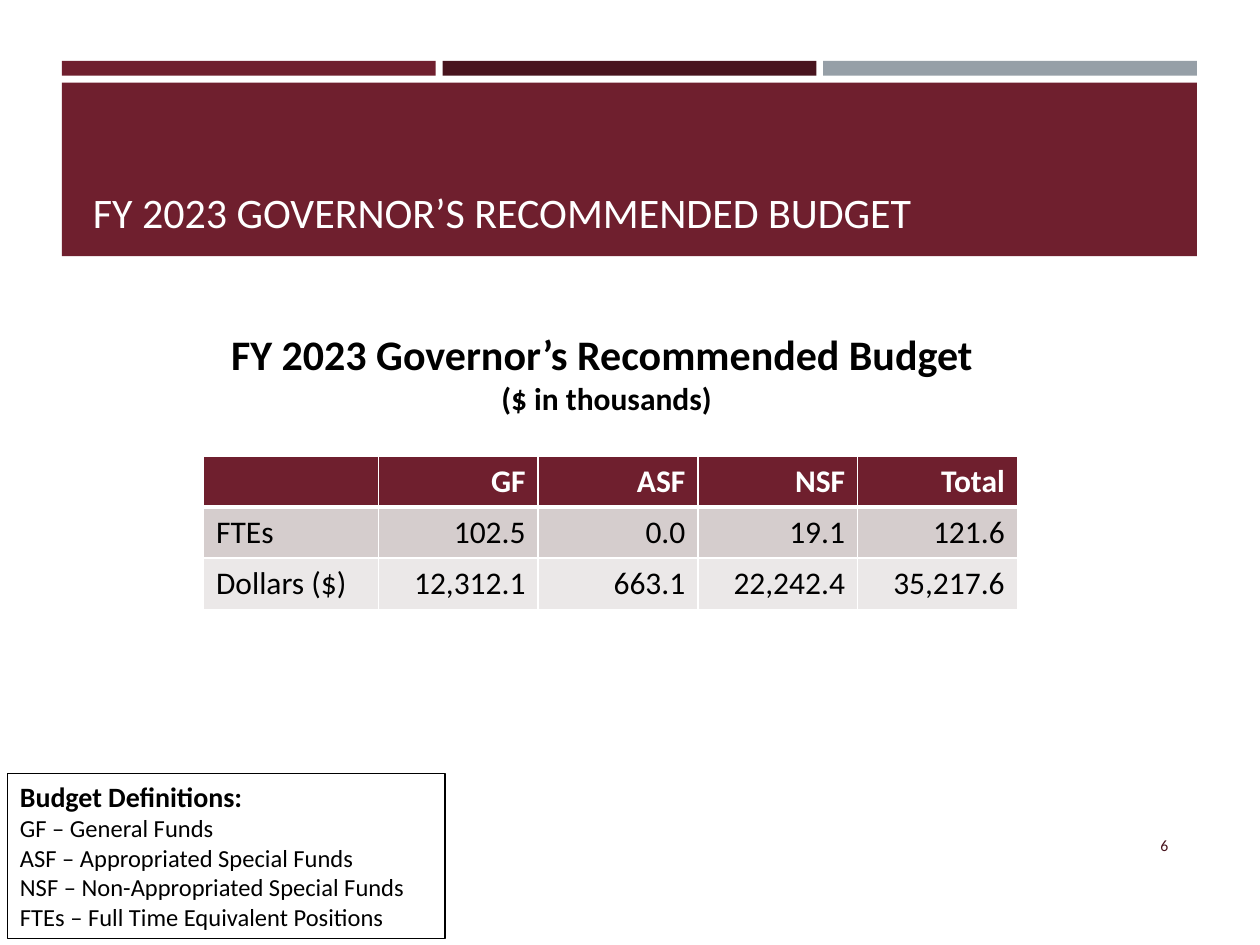
import pptx
import pptx.dml.color
import pptx.enum.shapes
import pptx.enum.text
import pptx.oxml
import pptx.oxml.ns
import pptx.util

Pt = pptx.util.Pt
ALIGN = pptx.enum.text.PP_ALIGN
ANCHOR = pptx.enum.text.MSO_ANCHOR
RECTANGLE = pptx.enum.shapes.MSO_SHAPE.RECTANGLE
MAROON, DARK_MAROON, GRAY = "6F1F2E", "48141E", "969FA7"
WHITE, BLACK = "FFFFFF", "000000"


def color(value):
    return pptx.dml.color.RGBColor.from_string(value)


def write_lines(frame, lines, align=ALIGN.LEFT, anchor=ANCHOR.TOP):
    """Fill a text frame with (text, size, bold, color) lines."""
    frame.word_wrap = True
    frame.vertical_anchor = anchor
    for index, (text, size, bold, text_color) in enumerate(lines):
        paragraph = frame.add_paragraph() if index else frame.paragraphs[0]
        paragraph.text = text
        paragraph.alignment = align
        paragraph.font.name = "Calibri"
        paragraph.font.size = Pt(size)
        paragraph.font.bold = bold
        paragraph.font.color.rgb = color(text_color)


presentation = pptx.Presentation()
presentation.slide_width, presentation.slide_height = Pt(720), Pt(540)
slide = presentation.slides.add_slide(presentation.slide_layouts[6])
shapes = slide.shapes

# Top strips and title band
bands = [(35.4 + index * 217.5, 34.8, 213.6, 8.4, fill)
         for index, fill in enumerate((MAROON, DARK_MAROON, GRAY))]
bands.append((35.4, 47.3, 648.6, 99.1, MAROON))
for left, top, width, height, fill in bands:
    band = shapes.add_shape(RECTANGLE, Pt(left), Pt(top), Pt(width), Pt(height))
    band.shadow.inherit = False
    band.fill.solid()
    band.fill.fore_color.rgb = color(fill)
    band.line.fill.background()

title = shapes.add_textbox(Pt(46), Pt(54), Pt(629.3), Pt(85))
write_lines(title.text_frame,
            [("FY 2023 GOVERNOR’S RECOMMENDED BUDGET", 24, False, WHITE)],
            anchor=ANCHOR.BOTTOM)

# Budget table
rows = [
    ("", "GF", "ASF", "NSF", "Total"),
    ("FTEs", "102.5", "0.0", "19.1", "121.6"),
    ("Dollars ($)", "12,312.1", "663.1", "22,242.4", "35,217.6"),
]
row_fills = (MAROON, "D5CDCD", "EBE8E8")
table_frame = shapes.add_table(3, 5, Pt(116.3), Pt(260.6), Pt(465.2), Pt(87.6))
table = table_frame.table
for index, column in enumerate(table.columns):
    column.width = Pt(91.3 if index else 100)
for row_index, values in enumerate(rows):
    table.rows[row_index].height = Pt(29.2)
    header = row_index == 0
    for column_index, value in enumerate(values):
        cell = table.cell(row_index, column_index)
        write_lines(cell.text_frame,
                    [(value, 18, header, WHITE if header else BLACK)],
                    ALIGN.RIGHT if column_index else ALIGN.LEFT)
        cell.fill.solid()
        cell.fill.fore_color.rgb = color(row_fills[row_index])
        borders = {"L": 1, "R": 1, "T": 3 if row_index == 1 else 1,
                   "B": 3 if header else 1}
        properties = cell._tc.get_or_add_tcPr()
        for position, (side, width) in enumerate(borders.items()):
            properties.insert(position, pptx.oxml.parse_xml(
                f'<a:ln{side} {pptx.oxml.ns.nsdecls("a")} w="{Pt(width)}">'
                f'<a:solidFill><a:srgbClr val="{WHITE}"/></a:solidFill>'
                f'</a:ln{side}>'))

caption = shapes.add_textbox(Pt(88.6), Pt(184.3), Pt(516.2), Pt(101.5))
write_lines(caption.text_frame,
            [("FY 2023 Governor’s Recommended Budget ", 24, True, BLACK),
             ("($ in thousands)", 18, True, BLACK)], ALIGN.CENTER)

definitions = shapes.add_shape(RECTANGLE, Pt(4.3), Pt(442), Pt(250), Pt(94.4))
definitions.shadow.inherit = False
definitions.fill.background()
definitions.line.color.rgb = color(BLACK)
definitions.line.width = Pt(0.75)
terms = ("GF – General Funds", "ASF – Appropriated Special Funds",
         "NSF – Non-Appropriated Special Funds",
         "FTEs – Full Time Equivalent Positions")
write_lines(definitions.text_frame,
            [("Budget Definitions:", 16, True, BLACK)]
            + [(term, 14, False, BLACK) for term in terms])

slide_number = shapes.add_textbox(Pt(614.2), Pt(468.7), Pt(60.5), Pt(28.8))
write_lines(slide_number.text_frame, [("6", 9, False, DARK_MAROON)],
            ALIGN.RIGHT, ANCHOR.MIDDLE)

presentation.save("out.pptx")
